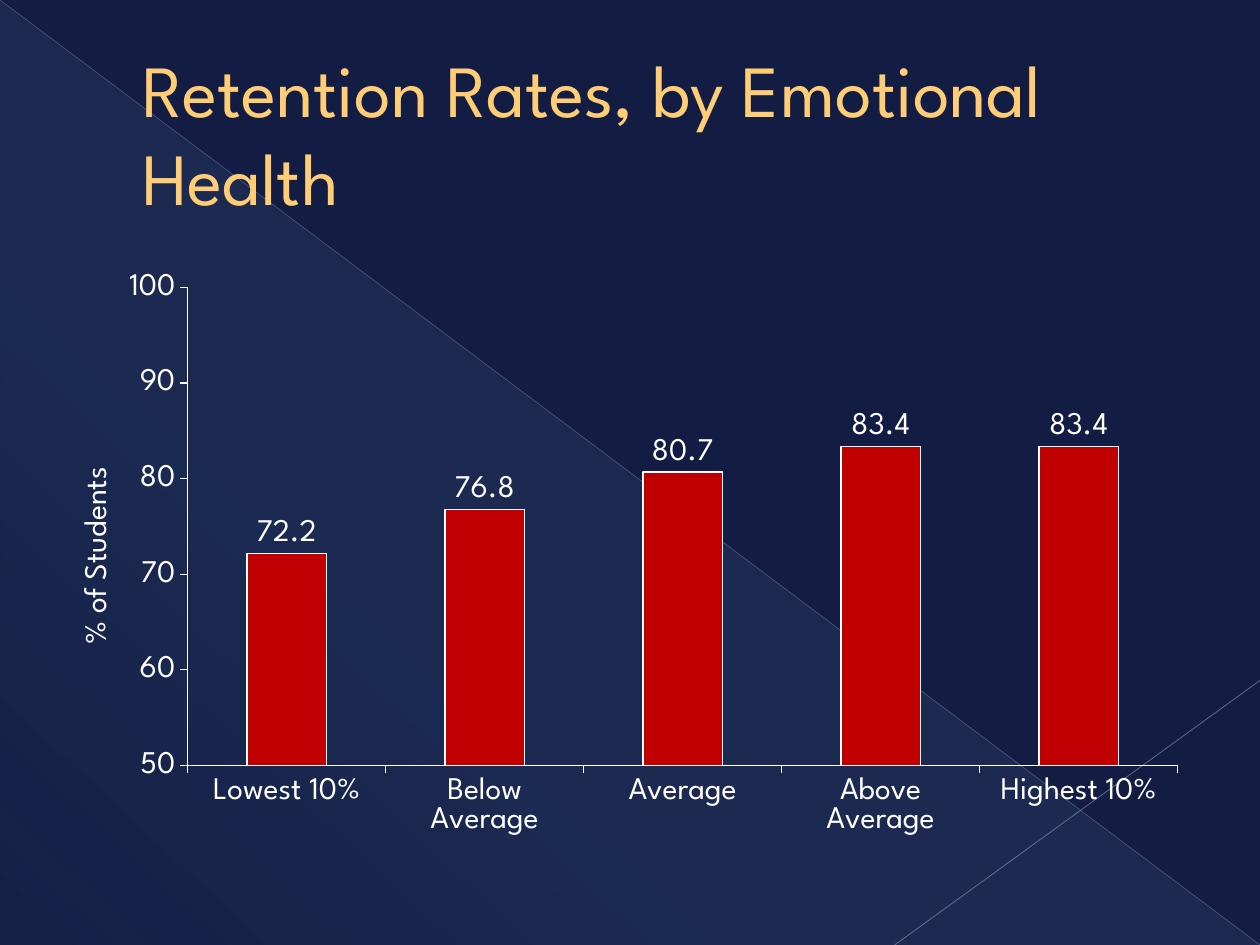
"""Build a slide with a column chart of retention rates by emotional health."""
from lxml.etree import SubElement
from pptx import Presentation
from pptx.chart.data import CategoryChartData
from pptx.dml.color import RGBColor
from pptx.enum.chart import XL_CHART_TYPE, XL_LABEL_POSITION, XL_TICK_MARK
from pptx.enum.shapes import MSO_CONNECTOR, MSO_SHAPE
from pptx.enum.text import MSO_ANCHOR, MSO_AUTO_SIZE, PP_ALIGN
from pptx.oxml import parse_xml
from pptx.oxml.ns import nsdecls, qn
from pptx.util import Inches, Pt

theme = {
    "font": "League Spartan",
    "back": "131D43", "glow": "76B6F2", "gold": "FFCD75", "edge": "AE8515",
    "bar": "C00000", "ink": "FFFFFF",
    "head": 42, "text": 18,
}
rgb = RGBColor.from_string


def write(text, frame, size, color, align=PP_ALIGN.LEFT):
    para = frame.paragraphs[0]
    para.alignment = align
    run = para.add_run()
    run.text = text
    font = run.font
    font.name, font.size, font.bold = theme["font"], Pt(size), False
    font.color.rgb = rgb(color)
    return run


def place(node, index, target=None, **spots):
    for old in node.findall(qn("c:layout")):
        node.remove(old)
    layout = parse_xml(f"<c:layout {nsdecls('c')}/>")
    manual = SubElement(layout, qn("c:manualLayout"))
    marks = {"layoutTarget": target} if target else {}
    marks |= {"xMode": "edge", "yMode": "edge"} | spots
    for name, value in marks.items():
        SubElement(manual, qn(f"c:{name}")).set("val", str(value))
    node.insert(index, layout)


deck = Presentation()
deck.slide_width, deck.slide_height = Inches(10), Inches(7.5)
wide, high = deck.slide_width, deck.slide_height
slide = deck.slides.add_slide(deck.slide_layouts[5])
slide.background.fill.solid()
slide.background.fill.fore_color.rgb = rgb(theme["back"])
shapes = slide.shapes

wedge = shapes.add_shape(MSO_SHAPE.RIGHT_TRIANGLE, 0, 0, wide, high)
wedge.shadow.inherit = False
wedge.line.fill.background()
stops = "".join(
    f'<a:gs pos="{pos * 1000}"><a:srgbClr val="{theme["glow"]}">'
    f'<a:alpha val="{alpha * 1000}"/></a:srgbClr></a:gs>'
    for pos, alpha in ((0, 10), (70, 8), (100, 1))
)
wedge.element.spPr.find(qn("a:prstGeom")).addnext(parse_xml(
    f'<a:gradFill {nsdecls("a")} rotWithShape="1"><a:gsLst>{stops}</a:gsLst>'
    f'<a:lin ang="{133 * 60000}" scaled="0"/></a:gradFill>'
))

for start, end, color, width, alpha in (
    ((0, 0), (1, 1), "ACB0D2", 0.39, 35),
    ((1, 0.72), (0.71, 1), "B5B9D7", 0.47, 45),
):
    line = shapes.add_connector(
        MSO_CONNECTOR.STRAIGHT,
        int(start[0] * wide), int(start[1] * high),
        int(end[0] * wide), int(end[1] * high),
    )
    line.line.color.rgb = rgb(color)
    line.line.width = Pt(width)
    props = line.element.spPr
    shade = next(props.iter(qn("a:srgbClr")))
    SubElement(shade, qn("a:alpha")).set("val", str(alpha * 1000))
    SubElement(props, qn("a:effectLst"))

title = shapes.title
title.left, title.top = int(0.05 * wide), int(0.04 * high)
title.width, title.height = int(0.9 * wide), int(0.2 * high)
frame = title.text_frame
frame.word_wrap = True
frame.auto_size = MSO_AUTO_SIZE.NONE
frame.vertical_anchor = MSO_ANCHOR.MIDDLE
run = write("Retention Rates, by Emotional Health", frame, theme["head"], theme["gold"])
run.font.element.insert(0, parse_xml(
    f'<a:ln {nsdecls("a")} w="{Pt(0.5)}"><a:solidFill>'
    f'<a:srgbClr val="{theme["edge"]}"/></a:solidFill></a:ln>'
)) if hasattr(run.font, "element") else None
props = frame.paragraphs[0]._p.get_or_add_pPr()
props.set("marL", str(Inches(0.53)))
props.set("indent", "0")
shapes.element.append(title.element) if hasattr(shapes, "element") else None

data = CategoryChartData(number_format="0.0")
data.categories = ["Lowest 10%", "Below Average", "Average", "Above Average", "Highest 10%"]
data.add_series("Series 1", (72.2, 76.8, 80.7, 83.4, 83.4))
chart = shapes.add_chart(
    XL_CHART_TYPE.COLUMN_CLUSTERED,
    int(0.05 * wide), int(0.275 * high), int(0.9 * wide), int(0.667 * high), data,
).chart
chart.has_legend = chart.has_title = False
chart.font.name, chart.font.size = theme["font"], Pt(theme["text"])
chart.font.color.rgb = rgb(theme["ink"])

plot = chart.plots[0]
plot.gap_width = 150
plot.vary_by_categories = False
plot.has_data_labels = True
labels = plot.data_labels
labels.show_value = True
labels.number_format, labels.number_format_is_linked = "0.0", False
labels.position = XL_LABEL_POSITION.OUTSIDE_END
look = plot.series[0].format
look.fill.solid()
look.fill.fore_color.rgb = rgb(theme["bar"])

axis = chart.value_axis
axis.minimum_scale, axis.maximum_scale, axis.major_unit = 50, 100, 10
axis.has_major_gridlines = False
axis.tick_labels.number_format = "0"
axis.tick_labels.number_format_is_linked = False
for side in (axis, chart.category_axis):
    side.major_tick_mark = XL_TICK_MARK.OUTSIDE
    side.minor_tick_mark = XL_TICK_MARK.NONE
for item in (look, axis.format, chart.category_axis.format):
    item.line.color.rgb = rgb(theme["ink"])
    item.line.width = Pt(0.75)

name = axis.axis_title
write("% of Students", name.text_frame, theme["text"], theme["ink"], PP_ALIGN.CENTER)
body = next(name._element.iter(qn("a:bodyPr")))
body.set("rot", "-5400000")
body.set("vert", "horz")
place(name._element, 1, x=0.01, y=0.32)
area = next(chart.element.iter(qn("c:plotArea"))) if hasattr(chart, "element") else next(
    chart._chartSpace.iter(qn("c:plotArea")))
place(area, 0, "inner", x=0.11, y=0.044, w=0.873, h=0.758)

deck.save("out.pptx")
